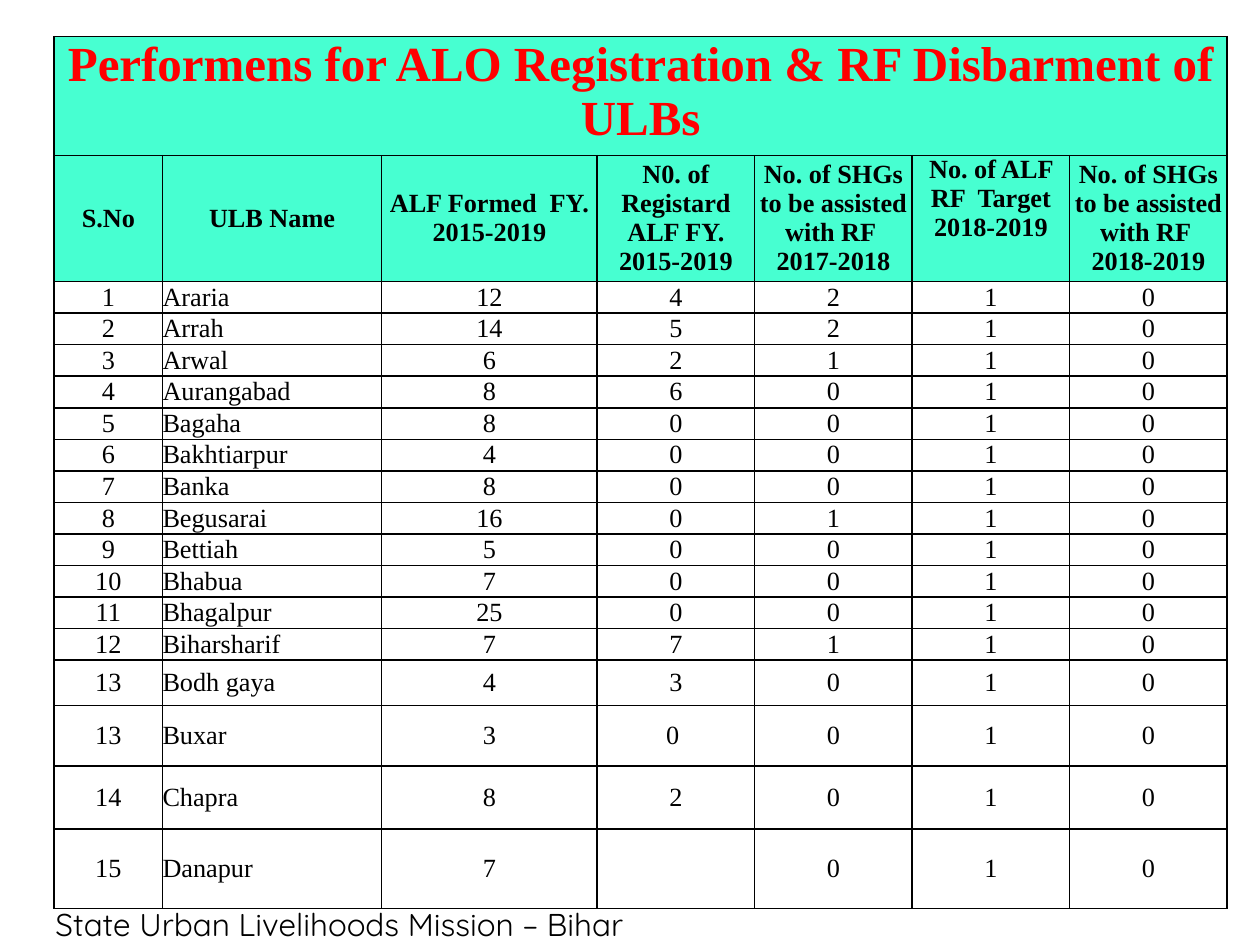
from pptx import Presentation
from pptx.dml.color import RGBColor
from pptx.enum.text import MSO_ANCHOR as Anchor, PP_ALIGN as Align
from pptx.oxml import parse_xml
from pptx.oxml.ns import nsdecls
from pptx.util import Inches, Pt

COLORS = {"ink": "000000", "title": "FF0000", "header": "47FFD1"}
COL_WIDTHS = [0.86, 1.74, 1.71] + [1.25] * 4
ROW_HEIGHTS = [0.94, 1.0] + [0.25] * 12 + [0.36, 0.48, 0.5, 0.63]

TITLE = "Performens for ALO Registration & RF Disbarment of ULBs"
HEADERS = [
    "S.No",
    "ULB Name",
    "ALF Formed  FY. 2015-2019",
    "N0. of Registard ALF FY. 2015-2019",
    "No. of SHGs to be assisted with RF  2017-2018",
    "No. of ALF RF  Target 2018-2019",
    "No. of SHGs to be assisted with RF  2018-2019",
]
# Serial number, ULB, ALF formed, ALF registered, SHGs assisted 2017-2018
ULBS = [
    (1, "Araria", 12, 4, 2),
    (2, "Arrah", 14, 5, 2),
    (3, "Arwal", 6, 2, 1),
    (4, "Aurangabad", 8, 6, 0),
    (5, "Bagaha", 8, 0, 0),
    (6, "Bakhtiarpur", 4, 0, 0),
    (7, "Banka", 8, 0, 0),
    (8, "Begusarai", 16, 0, 1),
    (9, "Bettiah", 5, 0, 0),
    (10, "Bhabua", 7, 0, 0),
    (11, "Bhagalpur", 25, 0, 0),
    (12, "Biharsharif", 7, 7, 1),
    (13, "Bodh gaya", 4, 3, 0),
    (13, "Buxar", 3, "0 ", 0),
    (14, "Chapra", 8, 2, 0),
    (15, "Danapur", 7, "", 0),
]
TARGET_2018, ASSISTED_2018 = 1, 0  # the same for every ULB


def write(tf, text, size=15, color="ink", bold=False, align=Align.CENTER,
          font="Times New Roman"):
    p = tf.paragraphs[0]
    p.alignment = align
    if not text:
        p.font.size = Pt(size)
        return
    r = p.add_run()
    r.text = text
    r.font.name = font
    r.font.size = Pt(size)
    r.font.bold = bold
    r.font.color.rgb = RGBColor.from_string(COLORS[color])


class SlideBuilder:
    def __init__(self, slide, border=1):
        self.slide = slide
        self.border = border

    def text(self, text, left, top, width, height, inset=0.1, **fmt):
        sp = self.slide.shapes.add_textbox(*map(Inches, (left, top, width, height)))
        tf = sp.text_frame
        tf.word_wrap = True
        tf.margin_left = Inches(inset)
        write(tf, text, **fmt)

    def table(self, left, top, widths, heights):
        frame = self.slide.shapes.add_table(
            len(heights), len(widths), Inches(left), Inches(top),
            Inches(sum(widths)), Inches(sum(heights)))
        table = frame.table
        table.first_row = table.horz_banding = False
        for col, width in zip(table.columns, widths):
            col.width = Inches(width)
        for row, height in zip(table.rows, heights):
            row.height = Inches(height)
        for cell in table.iter_cells():
            self.outline(cell)
            cell.fill.background()
        return table

    def outline(self, cell):
        tcPr = cell._tc.get_or_add_tcPr()
        for side in "LRTB":
            tcPr.append(parse_xml(
                f'<a:ln{side} {nsdecls("a")} w="{Pt(self.border)}"><a:solidFill>'
                f'<a:srgbClr val="{COLORS["ink"]}"/></a:solidFill></a:ln{side}>'))

    def cell(self, cell, text, fill=None, anchor=Anchor.MIDDLE, inset=0, **fmt):
        cell.margin_left = cell.margin_right = cell.margin_top = Inches(inset)
        cell.margin_bottom = 0
        cell.vertical_anchor = anchor
        if fill:
            cell.fill.solid()
            cell.fill.fore_color.rgb = RGBColor.from_string(COLORS[fill])
        write(cell.text_frame, text, **fmt)


def main():
    prs = Presentation()
    prs.slide_width, prs.slide_height = Inches(10), Inches(7.5)
    s = SlideBuilder(prs.slides.add_slide(prs.slide_layouts[6]))

    s.text("State Urban Livelihoods Mission – Bihar", 0.28, 7.13, 6.45, 0.4,
           inset=0.16, size=18, font="Quicksand", align=Align.LEFT)

    table = s.table(0.43, 0.29, COL_WIDTHS, ROW_HEIGHTS)
    title = table.cell(0, 0)
    title.merge(table.cell(0, len(COL_WIDTHS) - 1))
    s.cell(title, TITLE, fill="header", anchor=Anchor.TOP, inset=0.01,
           size=28, color="title", bold=True)

    for c, header in enumerate(HEADERS):
        anchor = Anchor.TOP if "Target" in header else Anchor.MIDDLE
        s.cell(table.cell(1, c), header, fill="header", anchor=anchor, bold=True)

    for r, ulb in enumerate(ULBS, start=2):
        for c, value in enumerate((*ulb, TARGET_2018, ASSISTED_2018)):
            align = Align.LEFT if c == 1 else Align.CENTER
            s.cell(table.cell(r, c), str(value), align=align)

    prs.save("out.pptx")


if __name__ == "__main__":
    main()
